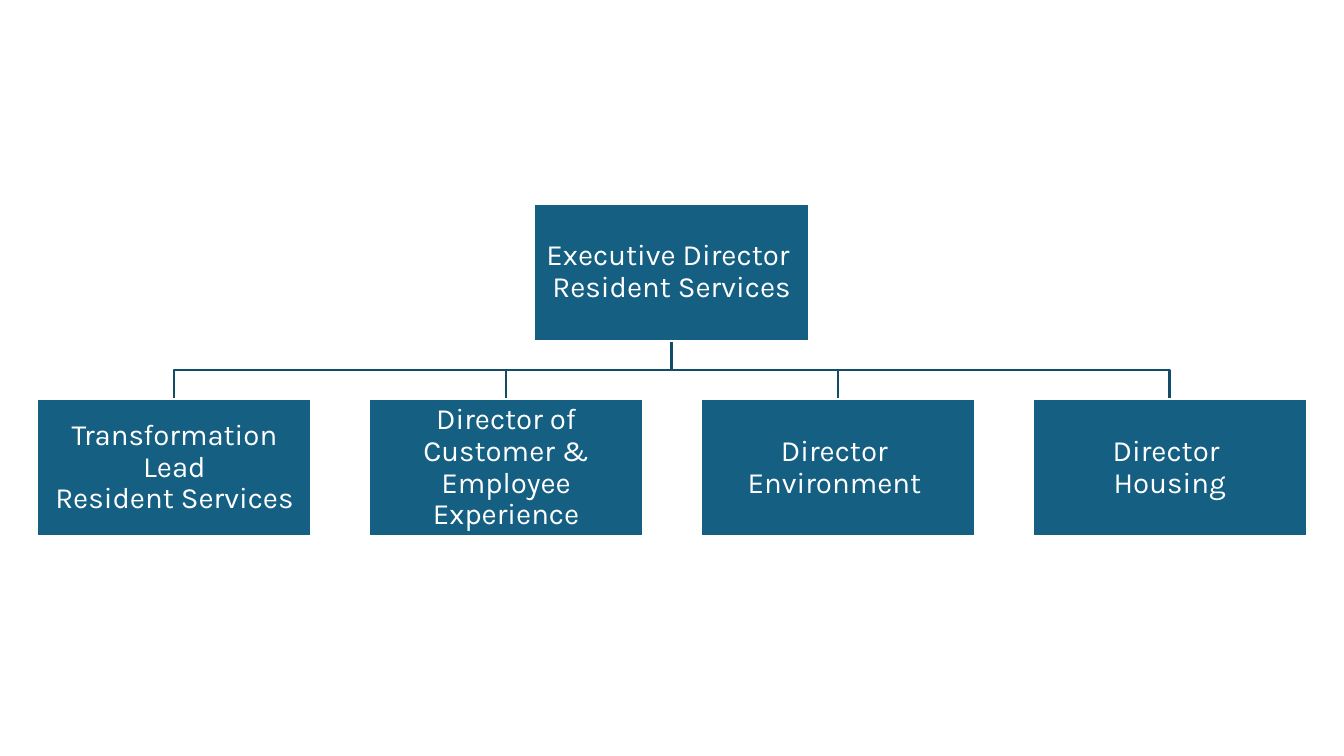
from pptx import Presentation
from pptx.dml.color import RGBColor
from pptx.enum.shapes import MSO_SHAPE
from pptx.enum.text import MSO_ANCHOR, PP_ALIGN
from pptx.util import Inches, Pt

RECTANGLE = MSO_SHAPE.RECTANGLE
MIDDLE = MSO_ANCHOR.MIDDLE
CENTER = PP_ALIGN.CENTER

BOX_BLUE = RGBColor(0x15, 0x60, 0x82)
LINE_BLUE = RGBColor(0x11, 0x4D, 0x68)
WHITE = RGBColor(0xFF, 0xFF, 0xFF)

BOX_WIDTH, BOX_HEIGHT = 2.72, 1.36
HEAD_LEFT, HEAD_TOP = 5.3, 2.02
REPORT_LEFT, REPORT_TOP, REPORT_STEP = 0.37, 3.96, 3.29

HEAD = ["Executive Director ", "Resident Services"]
REPORTS = [
    ["Transformation Lead", "Resident Services"],
    ["Director of Customer & Employee Experience"],
    ["Director ", "Environment "],
    ["Director ", "Housing"],
]

deck = Presentation()
deck.slide_width = Inches(13.33)
deck.slide_height = Inches(7.5)
page = deck.slides.add_slide(deck.slide_layouts[6])


def add_role(left, top, lines):
    box = page.shapes.add_shape(RECTANGLE, Inches(left), Inches(top),
                                Inches(BOX_WIDTH), Inches(BOX_HEIGHT))
    box.shadow.inherit = False
    box.fill.solid()
    box.fill.fore_color.rgb = BOX_BLUE
    box.line.color.rgb = WHITE
    box.line.width = Pt(1.5)
    frame = box.text_frame
    frame.word_wrap = True
    frame.vertical_anchor = MIDDLE
    frame.margin_left = frame.margin_right = Inches(0.01)
    frame.margin_top = frame.margin_bottom = Inches(0.01)
    para = frame.paragraphs[0]
    para.alignment = CENTER
    para.line_spacing = 0.9
    para.font.size = Pt(21)
    for number, line in enumerate(lines):
        if number:
            para.add_line_break()
        span = para.add_run()
        span.text = line
        span.font.name = "Karla"
        span.font.size = Pt(21)
        span.font.color.rgb = WHITE


# Branches from the head to each report
report_lefts = [REPORT_LEFT + REPORT_STEP * i for i in range(len(REPORTS))]
head_center = HEAD_LEFT + BOX_WIDTH / 2
head_bottom = HEAD_TOP + BOX_HEIGHT
bend = (head_bottom + REPORT_TOP) / 2
for left in report_lefts:
    center = left + BOX_WIDTH / 2
    corners = [(head_center, bend), (center, bend), (center, REPORT_TOP)]
    path_builder = page.shapes.build_freeform(Inches(head_center), Inches(head_bottom))
    path_builder.add_line_segments([(Inches(x), Inches(y)) for x, y in corners], close=False)
    branch = path_builder.convert_to_shape()
    branch.shadow.inherit = False
    branch.fill.background()
    branch.line.color.rgb = LINE_BLUE
    branch.line.width = Pt(1.5)

# Role boxes
add_role(HEAD_LEFT, HEAD_TOP, HEAD)
for left, lines in zip(report_lefts, REPORTS):
    add_role(left, REPORT_TOP, lines)

deck.save("out.pptx")
